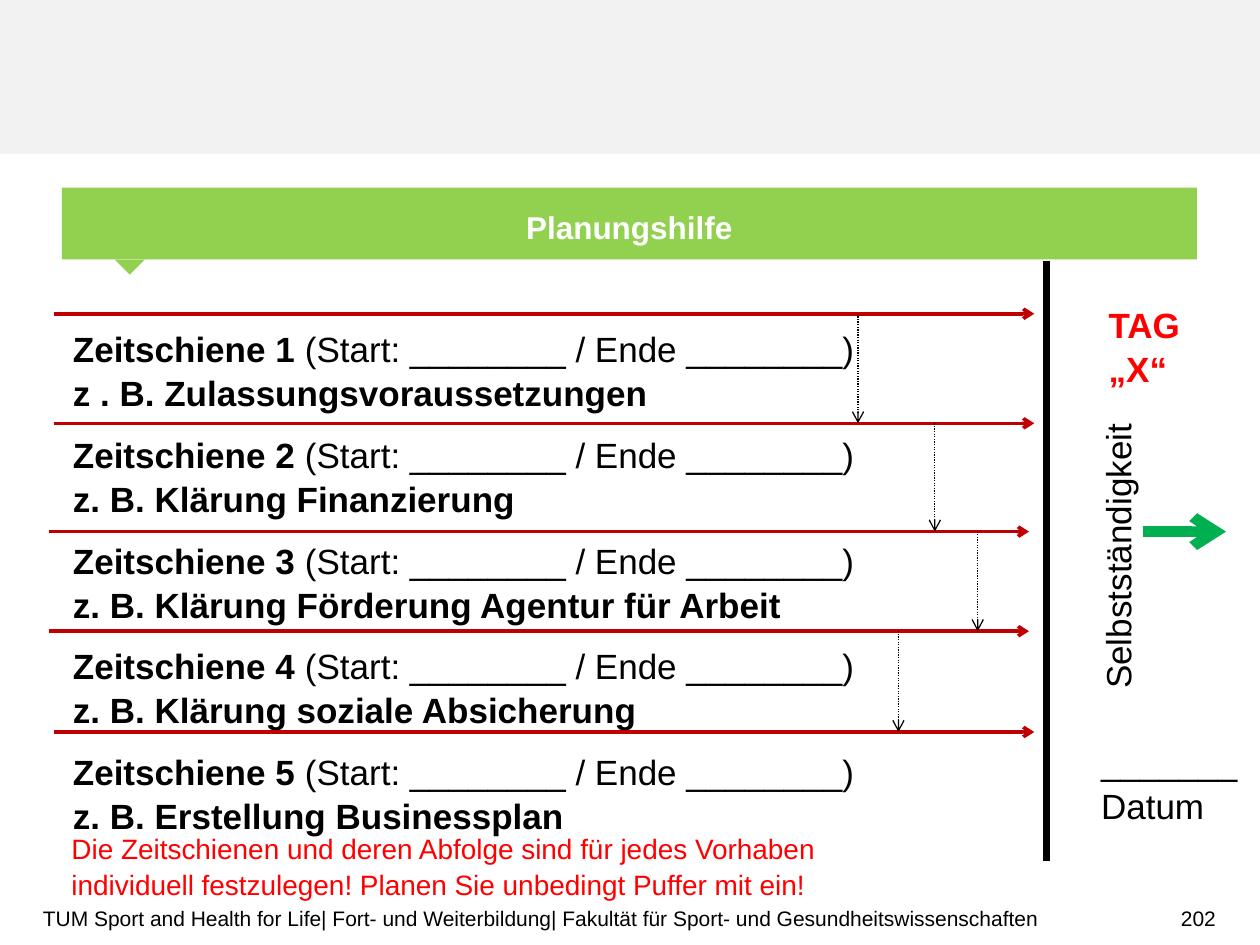
from itertools import pairwise
from lxml.etree import SubElement
from pptx import Presentation
from pptx.dml.color import RGBColor
from pptx.enum.dml import MSO_LINE
from pptx.enum.shapes import MSO_CONNECTOR, MSO_SHAPE
from pptx.enum.text import MSO_ANCHOR, PP_ALIGN
from pptx.oxml.ns import qn
from pptx.util import Pt

BLACK, RED, GREEN = "000000", "FF0000", "92D050"


def color(code):
    return RGBColor.from_string(code)


class Board:
    font = "Arial"

    def __init__(self, slide):
        self.shapes = slide.shapes

    def style(self, part, size, code, bold=False):
        font = part.font
        font.name, font.size, font.bold = self.font, Pt(size), bold
        font.color.rgb = color(code)

    def block(self, kind, box, fill):
        shape = self.shapes.add_shape(kind, *map(Pt, box))
        shape.shadow.inherit = False
        shape.fill.solid()
        shape.fill.fore_color.rgb = color(fill)
        shape.line.fill.background()
        return shape

    def title(self, box, text):
        shape = self.block(MSO_SHAPE.RECTANGLE, box, GREEN)
        frame = shape.text_frame
        frame.vertical_anchor = MSO_ANCHOR.MIDDLE
        frame.text = text
        para = frame.paragraphs[0]
        para.alignment = PP_ALIGN.CENTER
        para.line_spacing = 1.2
        self.style(para.runs[0], 18, "FFFFFF", True)

    def text(self, box, text, size=20, code=BLACK, bold=False, turn=0):
        shape = self.shapes.add_textbox(*map(Pt, box))
        shape.rotation = turn
        frame = shape.text_frame
        frame.word_wrap = True
        frame.text = text
        for para in frame.paragraphs:
            para.line_spacing = 1.05
            for run in para.runs:
                self.style(run, size, code, bold)
        return frame

    def footer(self, box, text, align=PP_ALIGN.LEFT):
        frame = self.text(box, text, 12)
        frame.margin_left = frame.margin_right = 0
        frame.vertical_anchor = MSO_ANCHOR.MIDDLE
        frame.paragraphs[0].alignment = align

    def tracks(self, box, goals):
        frame = self.text(box, "")
        for num, goal in enumerate(goals, 1):
            para = frame.paragraphs[0] if num == 1 else frame.add_paragraph()
            para.line_spacing = 1.05
            para.space_before = Pt(0 if num == 1 else 10)
            para.text = f"Zeitschiene {num} "
            para.add_run().text = "(Start: ________ / Ende ________)"
            para.add_line_break()
            para.add_run().text = goal
            for run, bold in zip(para.runs, (True, False, True)):
                self.style(run, 20, BLACK, bold)

    def line(self, ends, code, width, head=True, dash=None):
        link = self.shapes.add_connector(MSO_CONNECTOR.STRAIGHT, *map(Pt, ends))
        link.line.color.rgb = color(code)
        link.line.width = Pt(width)
        if dash:
            link.line.dash_style = dash
        if head:
            SubElement(link.line._get_or_add_ln(), qn("a:tailEnd"), type="arrow")
        SubElement(link._element.spPr, qn("a:effectLst"))


def main():
    deck = Presentation()
    deck.slide_width, deck.slide_height = Pt(720), Pt(540)
    board = Board(deck.slides.add_slide(deck.slide_layouts[6]))

    board.footer((24.5, 509.8, 615.6, 28.8),
                 "TUM Sport and Health for Life| Fort- und Weiterbildung| "
                 "Fakultät für Sport- und Gesundheitswissenschaften")
    board.block(MSO_SHAPE.RECTANGLE, (0, -2.9, 720, 90.7), "F2F2F2")
    tip = board.block(MSO_SHAPE.ISOSCELES_TRIANGLE, (65.5, 148.3, 17.3, 8.6), GREEN)
    tip.rotation = 180
    board.title((35.3, 107.3, 648.7, 41), "Planungshilfe")

    board.tracks((34.6, 182.5, 499, 302), (
        "z . B. Zulassungsvoraussetzungen",
        "z. B. Klärung Finanzierung",
        "z. B. Klärung Förderung Agentur für Arbeit",
        "z. B. Klärung soziale Absicherung",
        "z. B. Erstellung Businessplan",
    ))
    board.text((33.8, 470.9, 554.4, 46),
               "Die Zeitschienen und deren Abfolge sind für jedes Vorhaben\n"
               "individuell festzulegen! Planen Sie unbedingt Puffer mit ein!",
               16, RED)

    rows = (179.3, 241.9, 303.8, 360.7, 418.3)
    for left, row in zip((31, 31, 28, 28, 31), rows):
        board.line((left, row, left + 560, row), "C00000", 2)
    board.line((598.3, 149, 598.3, 491.8), BLACK, 4, head=False)

    board.text((626.4, 168.5, 68.4, 55.4), "TAG „X“", code=RED, bold=True)
    board.text((518.4, 265.7, 238.3, 31.7), "Selbstständigkeit", turn=270)
    board.line((653, 303.8, 700.6, 303.8), "00B050", 6)
    board.text((622.1, 418.3, 93.6, 55.4), "_______\vDatum")

    for left, (top, end) in zip((490.3, 534.2, 558.7, 513.4), pairwise(rows)):
        board.line((left, top, left, end), BLACK, 0.75, dash=MSO_LINE.ROUND_DOT)
    board.footer((533.5, 509.8, 161.3, 28.8), "202", PP_ALIGN.RIGHT)

    deck.save("out.pptx")


if __name__ == "__main__":
    main()
